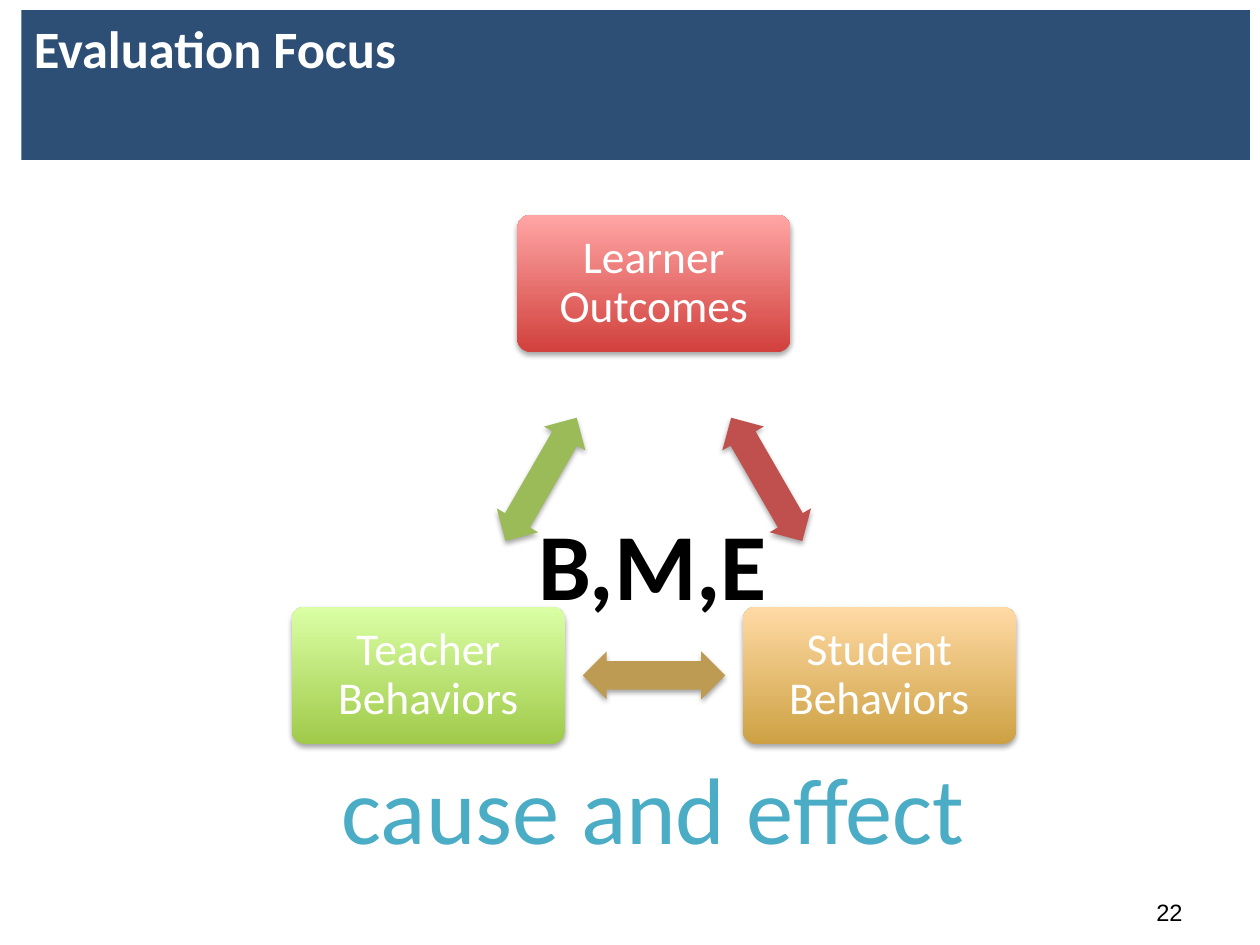
from math import atan2, degrees

from lxml.etree import SubElement
from pptx import Presentation
from pptx.dml.color import RGBColor
from pptx.enum.shapes import MSO_SHAPE
from pptx.enum.text import MSO_ANCHOR, PP_ALIGN
from pptx.oxml.ns import qn
from pptx.util import Inches, Pt

WIDTH, HEIGHT = 10, 7.5
CENTER_X, COLUMN = 5.19, 1.79
TOP_ROW, BOTTOM_ROW = 2.25, 5.36
CORNERS = [
    ("Learner Outcomes", 0, TOP_ROW, "D1403C", "FFA6A5", "C0504D"),
    ("Student Behaviors", 1, BOTTOM_ROW, "CDA143", "FFDAA5", "BD9B53"),
    ("Teacher Behaviors", -1, BOTTOM_ROW, "A0CA4A", "DAFFA5", "9BBB59"),
]


def color(hex_code):
    return RGBColor.from_string(hex_code)


def write(frame, text, size, hex_code, font="Calibri", bold=False, align=PP_ALIGN.LEFT):
    paragraph = frame.paragraphs[0]
    paragraph.text = text
    paragraph.alignment = align
    paragraph.font.name = font
    paragraph.font.size = Pt(size)
    paragraph.font.bold = bold
    paragraph.font.color.rgb = color(hex_code)
    return paragraph


def add_block(slide, preset, left, top, width, height):
    block = slide.shapes.add_shape(
        preset, Inches(left), Inches(top), Inches(width), Inches(height)
    )
    block.shadow.inherit = False
    block.line.fill.background()
    return block


def add_centered_block(slide, preset, x, y, width, height):
    return add_block(slide, preset, x - width / 2, y - height / 2, width, height)


def cast_shadow(block):
    effects = block._element.spPr.find(qn("a:effectLst"))
    shadow = SubElement(
        effects, qn("a:outerShdw"), blurRad=str(Pt(3.1)), dist=str(Pt(1.8)),
        dir="5400000", rotWithShape="0",
    )
    black = SubElement(shadow, qn("a:srgbClr"), val="000000")
    SubElement(black, qn("a:alpha"), val="35000")


def add_title(slide, text):
    banner = add_block(slide, MSO_SHAPE.RECTANGLE, 0.17, 0.08, 9.75, 1.19)
    banner.fill.solid()
    banner.fill.fore_color.rgb = color("2D4E75")
    banner.text_frame.vertical_anchor = MSO_ANCHOR.TOP
    write(banner.text_frame, text, 30, "FFFFFF", bold=True)


def add_corner(slide, text, x, y, dark, light):
    corner = add_centered_block(slide, MSO_SHAPE.ROUNDED_RECTANGLE, x, y, 2.17, 1.09)
    corner.adjustments[0] = 0.1
    corner.fill.gradient()
    corner.fill.gradient_angle = 90
    for stop, hex_code, position in zip(corner.fill.gradient_stops, (dark, light), (0, 1)):
        stop.color.rgb = color(hex_code)
        stop.position = position
    cast_shadow(corner)
    frame = corner.text_frame
    frame.word_wrap = True
    frame.vertical_anchor = MSO_ANCHOR.MIDDLE
    frame.margin_left = frame.margin_right = Inches(0.14)
    label = write(frame, text, 26, "FFFFFF", align=PP_ALIGN.CENTER)
    label.line_spacing = 0.9


def add_link(slide, start, end, hex_code):
    (x1, y1), (x2, y2) = start, end
    link = add_centered_block(
        slide, MSO_SHAPE.LEFT_RIGHT_ARROW, (x1 + x2) / 2, (y1 + y2) / 2, 1.13, 0.38
    )
    link.adjustments[0] = 0.6
    link.adjustments[1] = 0.5
    link.rotation = round(degrees(atan2(y2 - y1, x2 - x1))) % 360
    link.fill.solid()
    link.fill.fore_color.rgb = color(hex_code)
    cast_shadow(link)


def add_cycle(slide):
    centers = [(CENTER_X + column * COLUMN, y) for _, column, y, *_ in CORNERS]
    following = centers[1:] + centers[:1]
    for (text, _, _, dark, light, arrow), center, target in zip(CORNERS, centers, following):
        add_corner(slide, text, *center, dark, light)
        add_link(slide, center, target, arrow)


def add_caption(slide, left, top, width, height, text, size, hex_code, **style):
    caption = slide.shapes.add_textbox(
        Inches(left), Inches(top), Inches(width), Inches(height)
    )
    caption.text_frame.word_wrap = False
    write(caption.text_frame, text, size, hex_code, **style)


def main():
    deck = Presentation()
    deck.slide_width, deck.slide_height = Inches(WIDTH), Inches(HEIGHT)
    slide = deck.slides.add_slide(deck.slide_layouts[6])
    add_caption(slide, 9.08, 7.08, 0.43, 0.33, "22", 13.5, "000000", font="Arial")
    add_title(slide, "Evaluation Focus")
    add_cycle(slide)
    add_caption(slide, 2.58, 5.9, 5.21, 1.01, "cause and effect", 54, "4BACC6",
                align=PP_ALIGN.CENTER)
    add_caption(slide, 4.16, 3.97, 2.04, 1.01, "B,M,E", 54, "000000",
                bold=True, align=PP_ALIGN.CENTER)
    deck.save("out.pptx")


if __name__ == "__main__":
    main()
